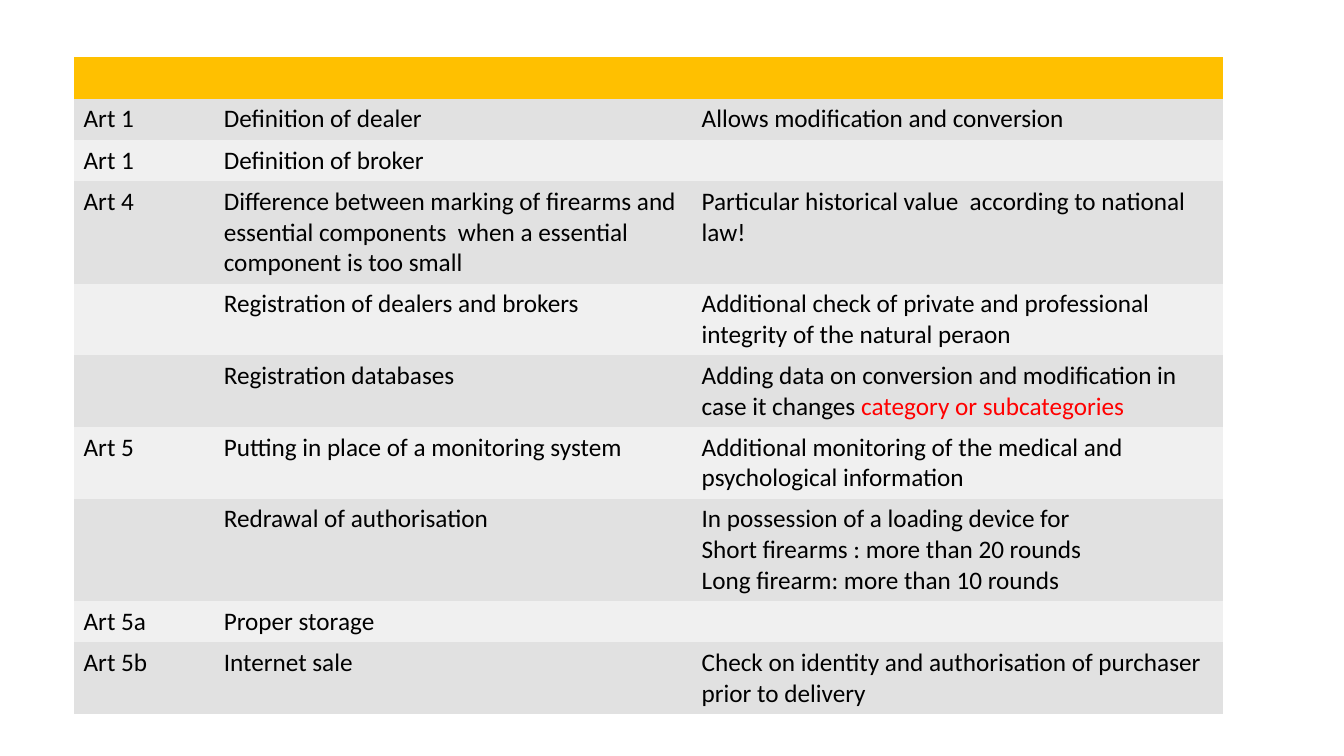
from pptx import Presentation
from pptx.dml.color import RGBColor
from pptx.oxml.ns import qn
from pptx.util import Inches, Pt

COLORS = {
    "header": "FFC000",
    "odd": "E1E1E1",
    "even": "F0F0F0",
    "text": "000000",
    "highlight": "FF0000",
}
PLAIN_STYLE = "{2D5ABB26-0587-4C30-8999-92F81FD0307C}"
COLUMN_WIDTHS = [1.39, 4.74, 5.27]
ROW_HEIGHT = 0.41
HIGHLIGHT = "category or subcategories"
ROWS = [
    ("", "", ""),
    ("Art 1", "Definition of dealer", "Allows modification and conversion"),
    ("Art 1", "Definition of broker", ""),
    (
        "Art 4",
        "Difference between marking of firearms and essential components  when a essential component is too small",
        "Particular historical value  according to national law!",
    ),
    (
        "",
        "Registration of dealers and brokers",
        "Additional check of private and professional integrity of the natural peraon",
    ),
    (
        "",
        "Registration databases",
        "Adding data on conversion and modification in case it changes " + HIGHLIGHT,
    ),
    (
        "Art 5",
        "Putting in place of a monitoring system",
        "Additional monitoring of the medical and psychological information",
    ),
    (
        "",
        "Redrawal of authorisation",
        "In possession of a loading device for\n"
        "Short firearms : more than 20 rounds\n"
        "Long firearm: more than 10 rounds",
    ),
    ("Art 5a", "Proper storage", ""),
    (
        "Art 5b",
        "Internet sale",
        "Check on identity and authorisation of purchaser prior to delivery",
    ),
]


def color(name):
    return RGBColor.from_string(COLORS[name])


def fill_cell(cell, text, fill_name):
    cell.fill.solid()
    cell.fill.fore_color.rgb = color(fill_name)
    plain, highlight, _ = text.partition(HIGHLIGHT)
    cell.text = plain
    for paragraph in cell.text_frame.paragraphs:
        paragraph.font.name = "Calibri"
        paragraph.font.size = Pt(18)
        paragraph.font.color.rgb = color("text")
    if highlight:
        run = cell.text_frame.paragraphs[-1].add_run()
        run.text = highlight
        run.font.color.rgb = color("highlight")


def add_articles_table(slide, left, top):
    frame = slide.shapes.add_table(
        len(ROWS),
        len(COLUMN_WIDTHS),
        Inches(left),
        Inches(top),
        Inches(sum(COLUMN_WIDTHS)),
        Inches(ROW_HEIGHT * len(ROWS)),
    )
    next(frame.element.iter(qn("a:tableStyleId"))).text = PLAIN_STYLE
    table = frame.table
    table.first_row = False
    table.horz_banding = False
    for column, width in zip(table.columns, COLUMN_WIDTHS):
        column.width = Inches(width)
    for index, texts in enumerate(ROWS):
        fill_name = "header" if index == 0 else "odd" if index % 2 else "even"
        for cell, text in zip(table.rows[index].cells, texts):
            fill_cell(cell, text, fill_name)


def main():
    presentation = Presentation()
    presentation.slide_width = Inches(13.33)
    presentation.slide_height = Inches(7.5)
    slide = presentation.slides.add_slide(presentation.slide_layouts[6])
    add_articles_table(slide, 0.73, 0.57)
    presentation.save("out.pptx")


if __name__ == "__main__":
    main()
